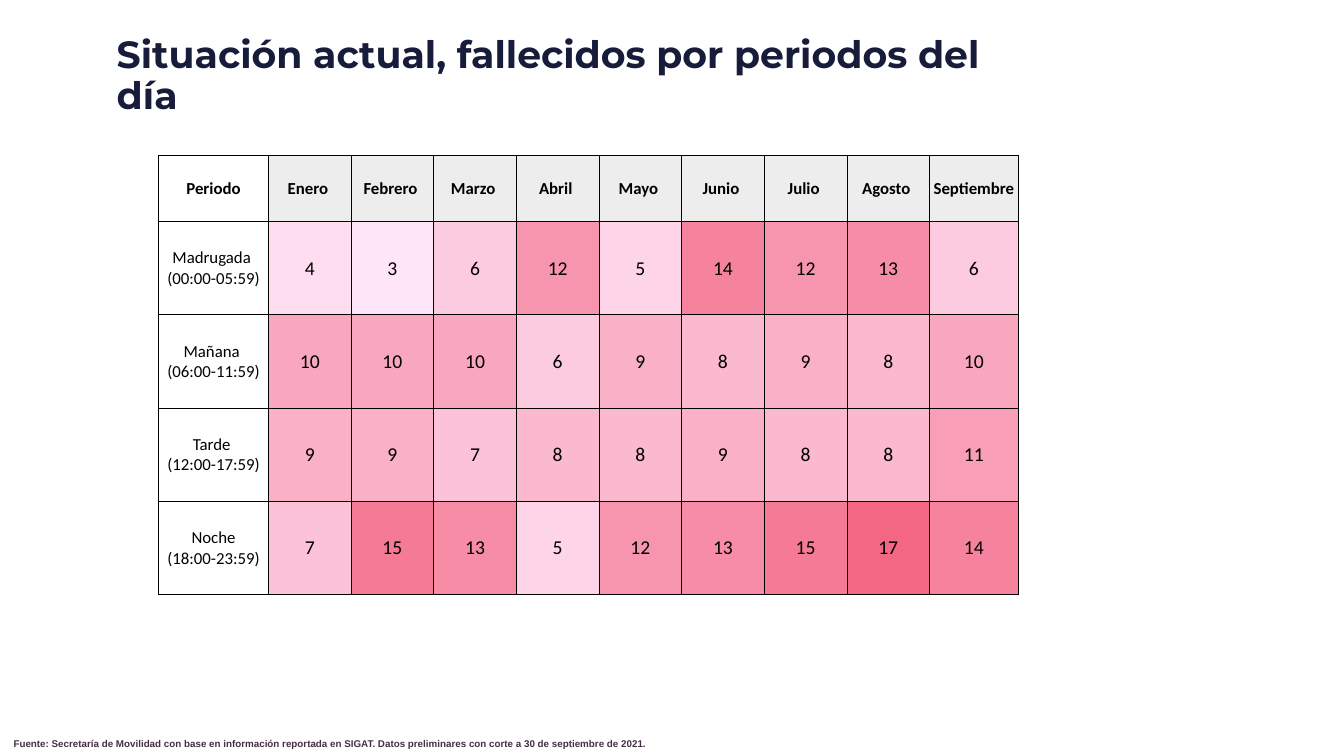
from dataclasses import dataclass

from lxml import etree
from pptx import Presentation
from pptx.dml.color import RGBColor
from pptx.enum.text import MSO_ANCHOR, PP_ALIGN
from pptx.oxml.ns import qn
from pptx.util import Inches, Pt

WIDE, HIGH = 26.67, 15
NAVY = RGBColor(0x17, 0x1C, 0x3B)
PLUM = RGBColor(0x45, 0x2E, 0x47)
BLACK = RGBColor(0, 0, 0)
GREY = RGBColor(0xED, 0xED, 0xED)
PALE = RGBColor(0xFE, 0xE6, 0xF8)
DEEP = RGBColor(0xF3, 0x67, 0x85)
LEFT, CENTER = PP_ALIGN.LEFT, PP_ALIGN.CENTER
TOP, MIDDLE, BOTTOM = MSO_ANCHOR.TOP, MSO_ANCHOR.MIDDLE, MSO_ANCHOR.BOTTOM

HEADS = ["Periodo", "Enero ", "Febrero ", "Marzo ", "Abril ", "Mayo ",
         "Junio ", "Julio ", "Agosto ", "Septiembre"]
COLS = [2.18] + [1.64] * 8 + [1.76]
ROWS = [1.32] + [1.85] * 4


@dataclass
class Period:
    label: str
    deaths: list[int]


PERIODS = [
    Period("Madrugada \n(00:00-05:59)", [4, 3, 6, 12, 5, 14, 12, 13, 6]),
    Period("Mañana \n(06:00-11:59)", [10, 10, 10, 6, 9, 8, 9, 8, 10]),
    Period("Tarde \n(12:00-17:59)", [9, 9, 7, 8, 8, 9, 8, 8, 11]),
    Period("Noche\n(18:00-23:59)", [7, 15, 13, 5, 12, 13, 15, 17, 14]),
]
COUNTS = [n for period in PERIODS for n in period.deaths]
LOW, PEAK = min(COUNTS), max(COUNTS)


def heat(count: int) -> RGBColor:
    """Blend from PALE at the lowest count to DEEP at the highest."""
    return RGBColor(*(a - (a - b) * (count - LOW) // (PEAK - LOW)
                      for a, b in zip(PALE, DEEP)))


def write(frame, text: str, *, size: float, font="Calibri", color=BLACK,
          bold=False, align=LEFT, spacing=1.0) -> None:
    frame.word_wrap = True
    frame.text = text
    for para in frame.paragraphs:
        para.alignment = align
        para.line_spacing = spacing
        para.font.size = Pt(size)
        para.font.name = font
        para.font.bold = bold
        para.font.color.rgb = color


def add_text(slide, box: tuple, text: str, *, inset=0.1, anchor=TOP,
             **style) -> None:
    frame = slide.shapes.add_textbox(*map(Inches, box)).text_frame
    frame.margin_left = frame.margin_right = Inches(inset)
    frame.vertical_anchor = anchor
    write(frame, text, **style)


def add_border(cell) -> None:
    props = cell._tc.get_or_add_tcPr()
    for spot, side in enumerate(("lnL", "lnR", "lnT", "lnB")):
        line = etree.Element(qn("a:" + side), w=str(Pt(0.75)))
        fill = etree.SubElement(line, qn("a:solidFill"))
        etree.SubElement(fill, qn("a:srgbClr"), val=str(BLACK))
        props.insert(spot, line)


def fill_cell(cell, text: str, *, fill: RGBColor | None = None, size=24,
              bold=False) -> None:
    cell.margin_left = cell.margin_right = cell.margin_top = Inches(0.01)
    cell.margin_bottom = 0
    cell.vertical_anchor = MIDDLE
    if fill is None:
        cell.fill.background()
    else:
        cell.fill.solid()
        cell.fill.fore_color.rgb = fill
    write(cell.text_frame, text, size=size, bold=bold, align=CENTER)
    add_border(cell)


def add_heatmap(slide, left: float, top: float) -> None:
    box = map(Inches, (left, top, sum(COLS), sum(ROWS)))
    table = slide.shapes.add_table(len(ROWS), len(COLS), *box).table
    table.first_row = table.horz_banding = False
    for col, width in zip(table.columns, COLS):
        col.width = Inches(width)
    for row, height in zip(table.rows, ROWS):
        row.height = Inches(height)
    for c, head in enumerate(HEADS):
        fill_cell(table.cell(0, c), head, fill=GREY if c else None, bold=True)
    for r, period in enumerate(PERIODS, 1):
        fill_cell(table.cell(r, 0), period.label)
        for c, count in enumerate(period.deaths, 1):
            fill_cell(table.cell(r, c), str(count), fill=heat(count), size=28)


def main() -> None:
    deck = Presentation()
    deck.slide_width, deck.slide_height = Inches(WIDE), Inches(HIGH)
    slide = deck.slides.add_slide(deck.slide_layouts[6])
    add_text(slide, (0.085 * WIDE, 0.043 * HIGH, 0.65 * WIDE, 0.116 * HIGH),
             "Situación actual, fallecidos por periodos del día",
             inset=0.05, anchor=BOTTOM, size=54, font="Montserrat",
             color=NAVY, bold=True, spacing=0.9)
    add_heatmap(slide, 0.118 * WIDE, 0.205 * HIGH)
    add_text(slide, (0.17, 0.972 * HIGH, 0.63 * WIDE, 0.34),
             "Fuente: Secretaría de Movilidad con base en información reportada "
             "en SIGAT. Datos preliminares con corte a 30 de septiembre de 2021.",
             size=14, font="Arial", color=PLUM, bold=True)
    deck.save("out.pptx")


if __name__ == "__main__":
    main()
